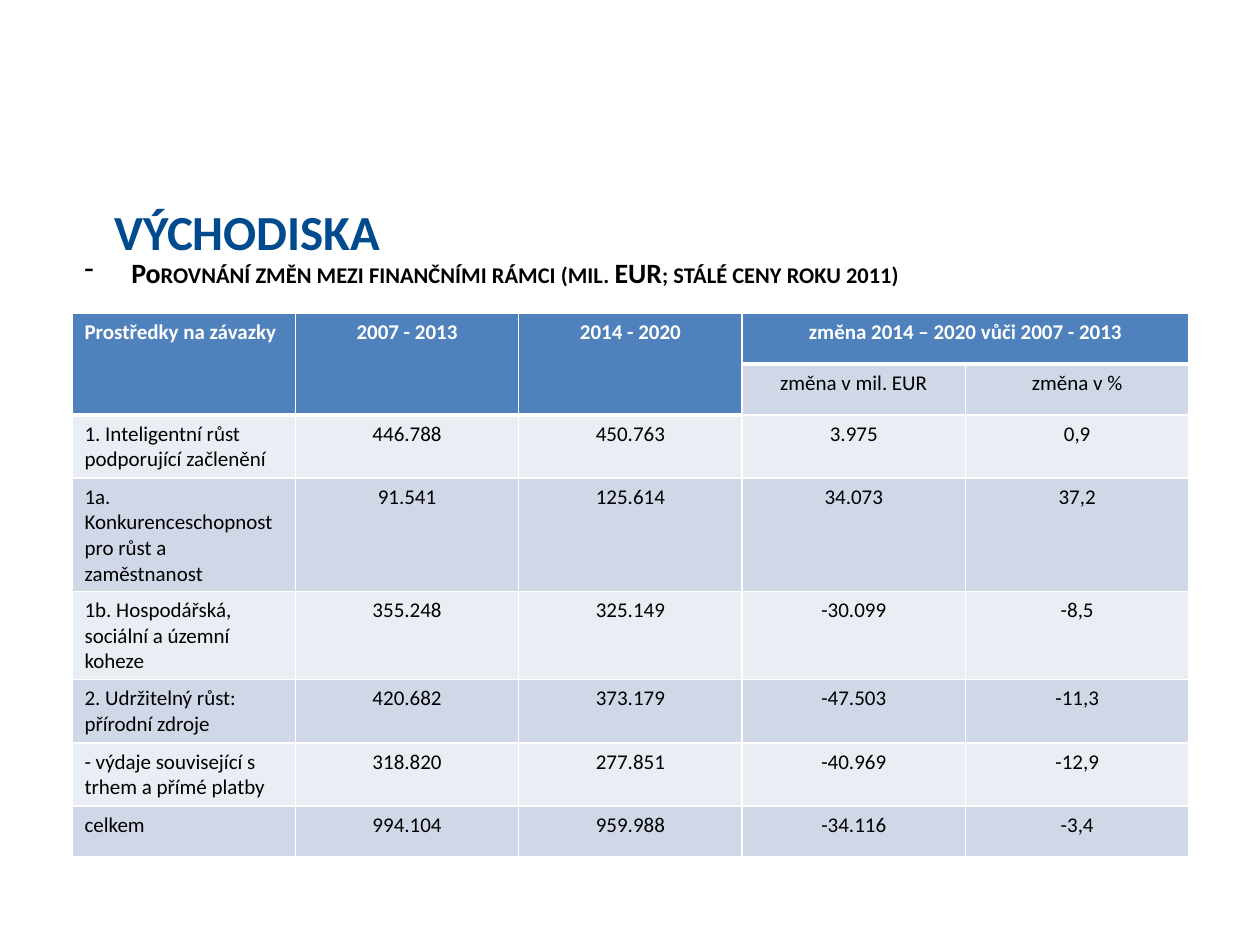
from dataclasses import dataclass

from lxml import etree
from pptx import Presentation
from pptx import util as u
from pptx.dml.color import RGBColor
from pptx.enum import text
from pptx.oxml.ns import qn

SCALE = 914400 / 126


@dataclass(frozen=True)
class Theme:
    font: str = "Calibri"
    title: str = "004B8E"
    ink: str = "000000"
    white: str = "FFFFFF"
    header: str = "4F81BD"
    bands: tuple = ("E9EDF4", "D0D8E8")
    title_size: int = 28
    subtitle_size: int = 16
    table_size: int = 12
    thin: int = 1
    thick: int = 3


THEME = Theme()
HEADER_COLUMNS = 3
ROWS = [
    ("Prostředky na závazky", "2007 - 2013", "2014 - 2020", "změna 2014 – 2020 vůči 2007 - 2013", ""),
    ("", "", "", "změna v mil. EUR", "změna v %"),
    ("1. Inteligentní růst podporující začlenění", "446.788", "450.763", "3.975", "0,9"),
    ("1a. Konkurenceschopnost pro růst a zaměstnanost", "91.541", "125.614", "34.073", "37,2"),
    ("1b. Hospodářská, sociální a územní koheze", "355.248", "325.149", "-30.099", "-8,5"),
    ("2. Udržitelný růst: přírodní zdroje", "420.682", "373.179", "-47.503", "-11,3"),
    ("- výdaje související s trhem a přímé platby", "318.820", "277.851", "-40.969", "-12,9"),
    ("celkem", "994.104", "959.988", "-34.116", "-3,4"),
]


def px(length):
    return u.Emu(round(length * SCALE))


def add_run(paragraph, words, size, color, bold=False):
    run = paragraph.add_run()
    run.text = words
    run.font.name = THEME.font
    run.font.size = u.Pt(size)
    run.font.bold = bold
    run.font.color.rgb = RGBColor.from_string(color)
    return run


def place_title(slide, left, top, width, height):
    title = slide.shapes.title
    title.left, title.top, title.width, title.height = map(px, (left, top, width, height))
    frame = title.text_frame
    frame.auto_size = text.MSO_AUTO_SIZE.NONE
    frame.vertical_anchor = text.MSO_ANCHOR.MIDDLE
    paragraph = frame.paragraphs[0]
    paragraph.alignment = text.PP_ALIGN.LEFT
    add_run(paragraph, "VÝCHODISKA", THEME.title_size, THEME.title, True)


def place_subtitle(slide, left, top, width, height):
    frame = slide.shapes.add_textbox(*map(px, (left, top, width, height))).text_frame
    frame.word_wrap = True
    paragraph = frame.paragraphs[0]
    paragraph.alignment = text.PP_ALIGN.JUSTIFY
    indent = px(47)
    properties = paragraph._p.get_or_add_pPr()
    properties.set("marL", str(indent))
    properties.set("indent", str(-indent))
    etree.SubElement(properties, qn("a:buChar")).set("char", "-")
    add_run(paragraph, "Po", THEME.subtitle_size, THEME.ink, True)
    run = add_run(paragraph, "rovnání změn mezi finančními rámci (mil. EUR; stálé ceny roku 2011)",
                  THEME.subtitle_size, THEME.ink, True)
    run.font._element.set("cap", "small")


def is_header(row, column):
    return row == 0 or (row == 1 and column < HEADER_COLUMNS)


def border_width(row, column):
    ends_header = is_header(row, column) and not (row == 0 and is_header(1, column))
    return THEME.thick if ends_header else THEME.thin


def add_borders(cell, row, column):
    above = border_width(row - 1, column) if row else THEME.thin
    widths = {"L": THEME.thin, "R": THEME.thin, "T": above, "B": border_width(row, column)}
    if row == 0:
        widths["B"] = THEME.thick
    properties = cell._tc.get_or_add_tcPr()
    for side, width in widths.items():
        line = etree.SubElement(properties, qn("a:ln" + side))
        line.set("w", str(u.Pt(width)))
        fill = etree.SubElement(line, qn("a:solidFill"))
        etree.SubElement(fill, qn("a:srgbClr")).set("val", THEME.white)


def format_cell(cell, row, column, words):
    add_borders(cell, row, column)
    header = is_header(row, column)
    cell.fill.solid()
    cell.fill.fore_color.rgb = RGBColor.from_string(THEME.header if header else THEME.bands[row % 2])
    paragraph = cell.text_frame.paragraphs[0]
    paragraph.alignment = text.PP_ALIGN.CENTER if column else text.PP_ALIGN.LEFT
    if words:
        add_run(paragraph, words, THEME.table_size, THEME.white if header else THEME.ink, header)
    else:
        paragraph.font.size = u.Pt(THEME.table_size)


def place_table(slide, left, top, width, row_height):
    frame = slide.shapes.add_table(len(ROWS), len(ROWS[0]), px(left), px(top),
                                   px(width), px(row_height * len(ROWS)))
    table = frame.table
    for column in table.columns:
        column.width = px(width / len(ROWS[0]))
    for row, values in enumerate(ROWS):
        table.rows[row].height = px(row_height)
        for column, words in enumerate(values):
            format_cell(table.cell(row, column), row, column, words)
    for column in range(HEADER_COLUMNS):
        table.cell(0, column).merge(table.cell(1, column))
    table.cell(0, HEADER_COLUMNS).merge(table.cell(0, len(ROWS[0]) - 1))


def main():
    presentation = Presentation()
    presentation.slide_width = px(1260)
    presentation.slide_height = px(945)
    slide = presentation.slides.add_slide(presentation.slide_layouts[5])
    place_subtitle(slide, 72, 249, 1134, 571)
    place_title(slide, 102, 194, 1134, 74)
    place_table(slide, 72, 313, 1117, 51)
    presentation.save("out.pptx")


if __name__ == "__main__":
    main()
